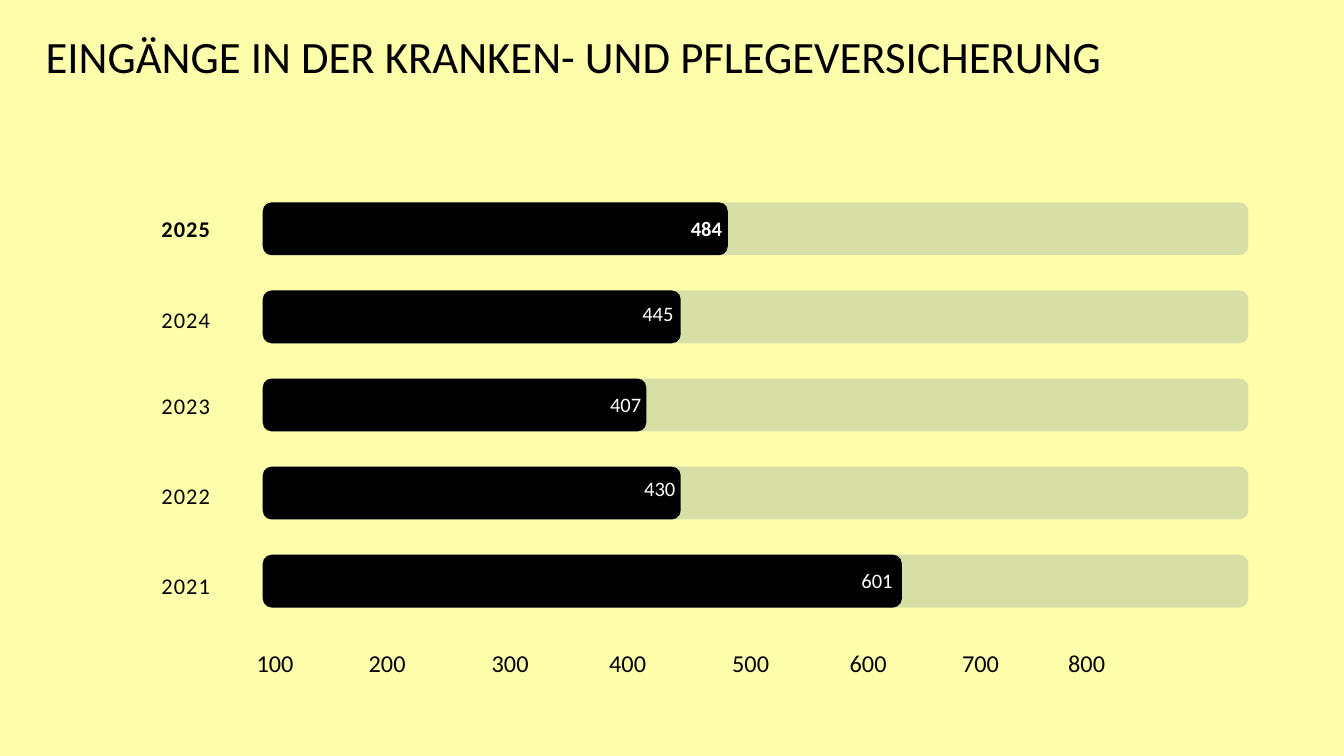
from lxml.etree import SubElement
from pptx import Presentation
from pptx.dml.color import RGBColor
from pptx.enum.shapes import MSO_SHAPE as SHAPE
from pptx.enum.text import MSO_ANCHOR as ANCHOR, PP_ALIGN as ALIGN
from pptx.oxml.ns import qn
from pptx.util import Cm, Pt

TITLE = "EINGÄNGE IN DER KRANKEN- UND PFLEGEVERSICHERUNG"
# Lengths in cm: year, its top, value, its left and top, bar length
ROWS = [
    ("2025", 7.87, "484", 25.86, 8.05, 17.58),
    ("2024", 11.33, "445", 24.03, 11.25, 15.8),
    ("2023", 14.58, "407", 22.81, 14.71, 14.5),
    ("2022", 17.96, "430", 24.1, 17.88, 15.8),
    ("2021", 21.36, "601", 32.31, 21.34, 24.16),
]
TICKS = [("100", 8.26), ("200", 12.5), ("300", 17.15), ("400", 21.59),
         ("500", 26.24), ("600", 30.68), ("700", 34.93), ("800", 38.94)]
HIGHLIGHT = "2025"

BACKGROUND, TRACK, BLACK, WHITE = "FFFFAB", "376092", "000000", "FFFFFF"
BAR_LEFT, BAR_TOP, BAR_HEIGHT, BAR_PITCH = 9.93, 7.65, 2, 3.33
TRACK_LENGTH, CORNER = 37.26, 0.34


def paint(fill, color):
    fill.solid()
    fill.fore_color.rgb = RGBColor.from_string(color)


def add_run(p, text, size, color=BLACK, bold=False):
    r = p.add_run()
    r.text = text
    r.font.name = "Calibri"
    r.font.size = Pt(size)
    r.font.bold = bold
    r.font.color.rgb = RGBColor.from_string(color)
    return r


def add_bar(s, top, length, color, alpha=None):
    """Add a rounded bar; alpha is its opacity in percent."""
    sp = s.shapes.add_shape(SHAPE.ROUNDED_RECTANGLE, Cm(BAR_LEFT), Cm(top),
                            Cm(length), Cm(BAR_HEIGHT))
    sp.adjustments[0] = CORNER / BAR_HEIGHT
    sp.shadow.inherit = False
    sp.line.fill.background()
    paint(sp.fill, color)
    if alpha:
        clr = sp._element.spPr.find(qn("a:solidFill"))[0]
        SubElement(clr, qn("a:alpha"), val=str(alpha * 1000))


def add_label(s, text, left, top, width, size, line, bold=False):
    """Add a centred label without insets and with exact line spacing."""
    tf = s.shapes.add_textbox(Cm(left), Cm(top), Cm(width), Cm(1.2)).text_frame
    tf.word_wrap = True
    tf.margin_left = tf.margin_right = tf.margin_top = tf.margin_bottom = 0
    p = tf.paragraphs[0]
    p.alignment = ALIGN.CENTER
    p.line_spacing = Pt(line)
    return add_run(p, text, size, bold=bold)


def add_value(s, text, left, top, bold):
    tf = s.shapes.add_textbox(Cm(left), Cm(top), Cm(1.7), Cm(1.2)).text_frame
    tf.word_wrap = False
    add_run(tf.paragraphs[0], text, 22, WHITE, bold)


def main():
    prs = Presentation()
    prs.slide_width, prs.slide_height = Cm(50.8), Cm(28.58)
    s = prs.slides.add_slide(prs.slide_layouts[5])
    paint(s.background.fill, BACKGROUND)

    title = s.shapes.title
    title.left, title.top = Cm(1.47), Cm(0.97)
    title.width, title.height = Cm(40.67), Cm(4.27)
    tf = title.text_frame
    tf.vertical_anchor = ANCHOR.TOP
    tf.paragraphs[0].alignment = ALIGN.LEFT
    add_run(tf.paragraphs[0], TITLE, 48)

    for i, (year, year_top, value, left, value_top, length) in enumerate(ROWS):
        bold = year == HIGHLIGHT
        top = BAR_TOP + i * BAR_PITCH
        add_bar(s, top, TRACK_LENGTH, TRACK, alpha=20)
        add_bar(s, top, length, BLACK)
        r = add_label(s, year, 2.31, year_top, 9.42, 24, 36, bold)
        r.font._element.set("spc", "120")
        add_value(s, value, left, value_top, bold)

    for text, left in TICKS:
        add_label(s, text, left, 24.33, 4.27, 26, 36.4)

    prs.save("out.pptx")


if __name__ == "__main__":
    main()
